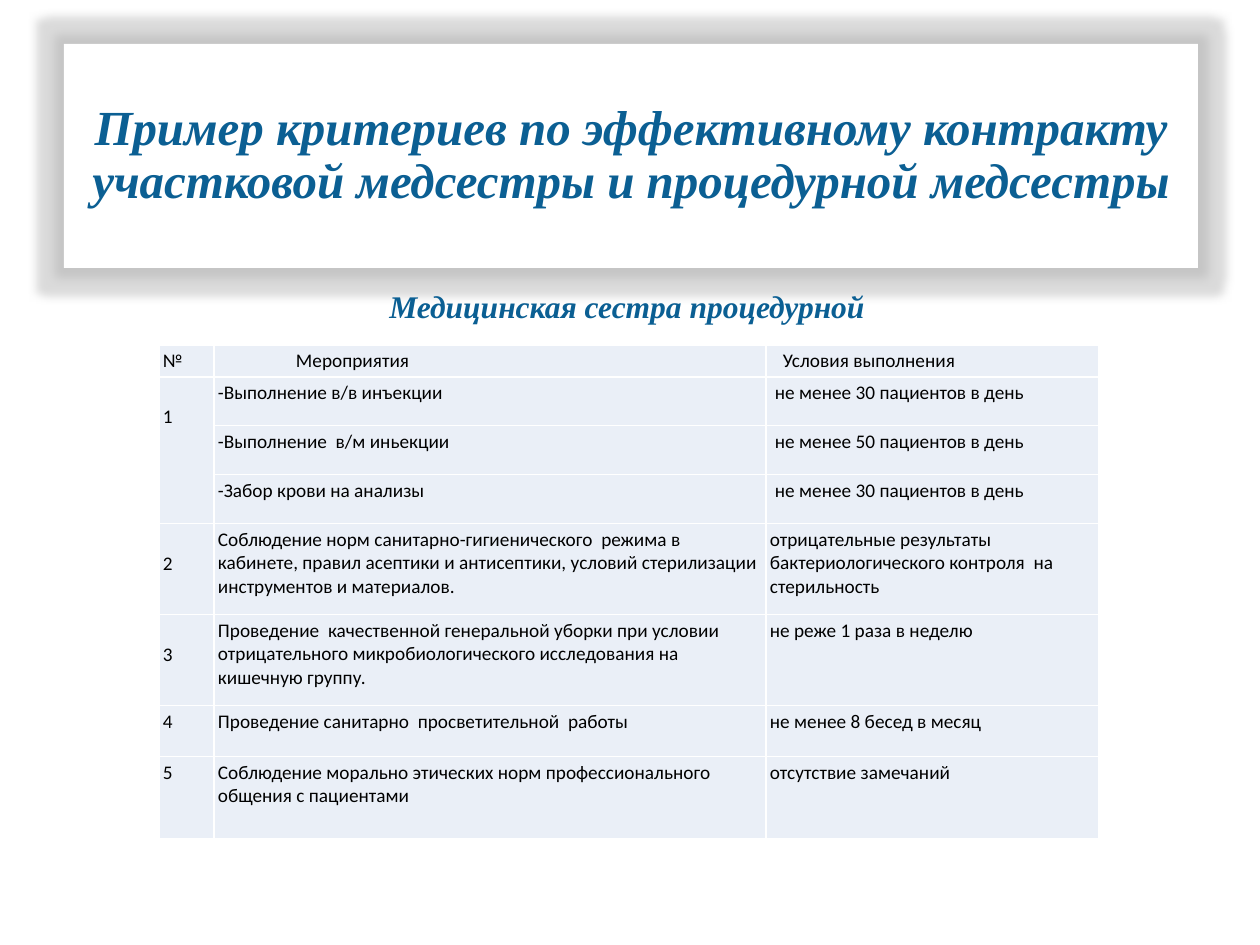
from lxml import etree
from pptx import Presentation
from pptx.dml.color import RGBColor
from pptx.enum.shapes import MSO_SHAPE
from pptx.enum.text import MSO_ANCHOR, PP_ALIGN
from pptx.oxml.ns import qn
from pptx.util import Pt

SCALE = 914400 / 126
RECTANGLE = MSO_SHAPE.RECTANGLE
MIDDLE = MSO_ANCHOR.MIDDLE
CENTER = PP_ALIGN.CENTER

TITLE = "Пример критериев по эффективному контракту участковой медсестры и процедурной медсестры"
SUBTITLE = "Медицинская сестра процедурной"
HEADING = {"name": "Times New Roman", "bold": True, "italic": True}
BODY = {"name": "Calibri", "size": Pt(11), "bold": False}
BLUE, BLACK, WHITE, PALE = "0B5F93", "000000", "FFFFFF", "EAEFF7"

COLUMN_WIDTHS = [55, 552, 333]
ROW_HEIGHTS = [31, 49, 49, 49, 91, 91, 51, 82]
ROWS = [
    ["№", "Мероприятия", "Условия выполнения"],
    ["1", "-Выполнение в/в инъекции", "не менее 30 пациентов в день"],
    ["", "-Выполнение  в/м иньекции", "не менее 50 пациентов в день"],
    ["", "-Забор крови на анализы", "не менее 30 пациентов в день"],
    ["2", "Соблюдение норм санитарно-гигиенического  режима в кабинете, "
          "правил асептики и антисептики, условий стерилизации инструментов и материалов.",
     "отрицательные результаты бактериологического контроля  на стерильность"],
    ["3", "Проведение  качественной генеральной уборки при условии отрицательного "
          "микробиологического исследования на кишечную группу.", "не реже 1 раза в неделю"],
    ["4", "Проведение санитарно  просветительной  работы", "не менее 8 бесед в месяц"],
    ["5", "Соблюдение морально этических норм профессионального общения с пациентами",
     "отсутствие замечаний"],
]
CELL_MARGIN = 4
LINE_HEIGHT = 24
LOWERED_ROWS = {1, 4, 5}
INDENTS = {(0, 1): 78, (0, 2): 13, (1, 2): 5, (2, 2): 5, (3, 2): 5}


def px(length):
    """Turn pixels into EMU."""
    return round(length * SCALE)


def color(value):
    """Turn a hex string into a colour."""
    return RGBColor.from_string(value)


def write(frame, text, ink, values):
    """Put one formatted paragraph into a text frame and return it."""
    para = frame.paragraphs[0]
    span = para.add_run()
    span.text = text
    for name, value in values.items():
        setattr(span.font, name, value)
    span.font.color.rgb = color(ink)
    return para


def add_glow(shape, radius, tint, alpha):
    """Surround a shape with a soft translucent glow."""
    properties = shape.fill._xPr
    for old in properties.findall(qn("a:effectLst")):
        properties.remove(old)
    effects = etree.SubElement(properties, qn("a:effectLst"))
    glow = etree.SubElement(effects, qn("a:glow"), rad=str(px(radius)))
    shade = etree.SubElement(glow, qn("a:srgbClr"), val=tint)
    etree.SubElement(shade, qn("a:alpha"), val=str(alpha * 1000))


def add_title(page, left, top, width, height):
    """Draw the glowing title panel."""
    box = page.shapes.add_shape(RECTANGLE, *map(px, (left, top, width, height)))
    box.fill.solid()
    box.fill.fore_color.rgb = color(WHITE)
    box.line.fill.background()
    add_glow(box, 19, "A5A5A5", 40)
    box.text_frame.word_wrap = True
    box.text_frame.vertical_anchor = MIDDLE
    para = write(box.text_frame, TITLE, BLUE, {**HEADING, "size": Pt(28)})
    para.alignment = CENTER
    para.line_spacing = 0.9


def add_subtitle(page, left, top, width, height):
    """Write the line above the table."""
    box = page.shapes.add_textbox(*map(px, (left, top, width, height)))
    box.text_frame.word_wrap = True
    write(box.text_frame, SUBTITLE, BLUE, {**HEADING, "size": Pt(18)})


def add_borders(cell, tint):
    """Give a cell a one-point line on every side."""
    properties = cell._tc.get_or_add_tcPr()
    for side in "LRTB":
        line = etree.SubElement(properties, qn(f"a:ln{side}"), w=str(Pt(1)))
        fill = etree.SubElement(line, qn("a:solidFill"))
        etree.SubElement(fill, qn("a:srgbClr"), val=tint)


def fill_cell(cell, text, indent, drop):
    """Format one table cell and write its text."""
    margins = {"left": CELL_MARGIN + indent, "top": CELL_MARGIN + drop,
               "right": CELL_MARGIN, "bottom": CELL_MARGIN}
    for side, margin in margins.items():
        setattr(cell, f"margin_{side}", px(margin))
    add_borders(cell, WHITE)
    cell.fill.solid()
    cell.fill.fore_color.rgb = color(PALE)
    if text:
        write(cell.text_frame, text, BLACK, BODY)


def add_criteria(page, left, top):
    """Build the table of criteria."""
    size = sum(COLUMN_WIDTHS), sum(ROW_HEIGHTS)
    frame = page.shapes.add_table(len(ROWS), len(COLUMN_WIDTHS),
                                  *map(px, (left, top, *size)))
    table = frame.table
    table.first_row = table.horz_banding = False
    for column, width in zip(table.columns, COLUMN_WIDTHS):
        column.width = px(width)
    for row, height in zip(table.rows, ROW_HEIGHTS):
        row.height = px(height)
    for i, texts in enumerate(ROWS):
        for j, text in enumerate(texts):
            drop = LINE_HEIGHT if j == 0 and i in LOWERED_ROWS else 0
            fill_cell(table.cell(i, j), text, INDENTS.get((i, j), 0), drop)
    table.cell(1, 0).merge(table.cell(3, 0))


def main():
    """Build and save the deck."""
    deck = Presentation()
    deck.slide_width, deck.slide_height = px(1260), px(945)
    page = deck.slides.add_slide(deck.slide_layouts[6])
    add_title(page, 64, 44, 1134, 224)
    add_criteria(page, 159, 345)
    add_subtitle(page, 377, 281, 507, 50)
    deck.save("out.pptx")


if __name__ == "__main__":
    main()
